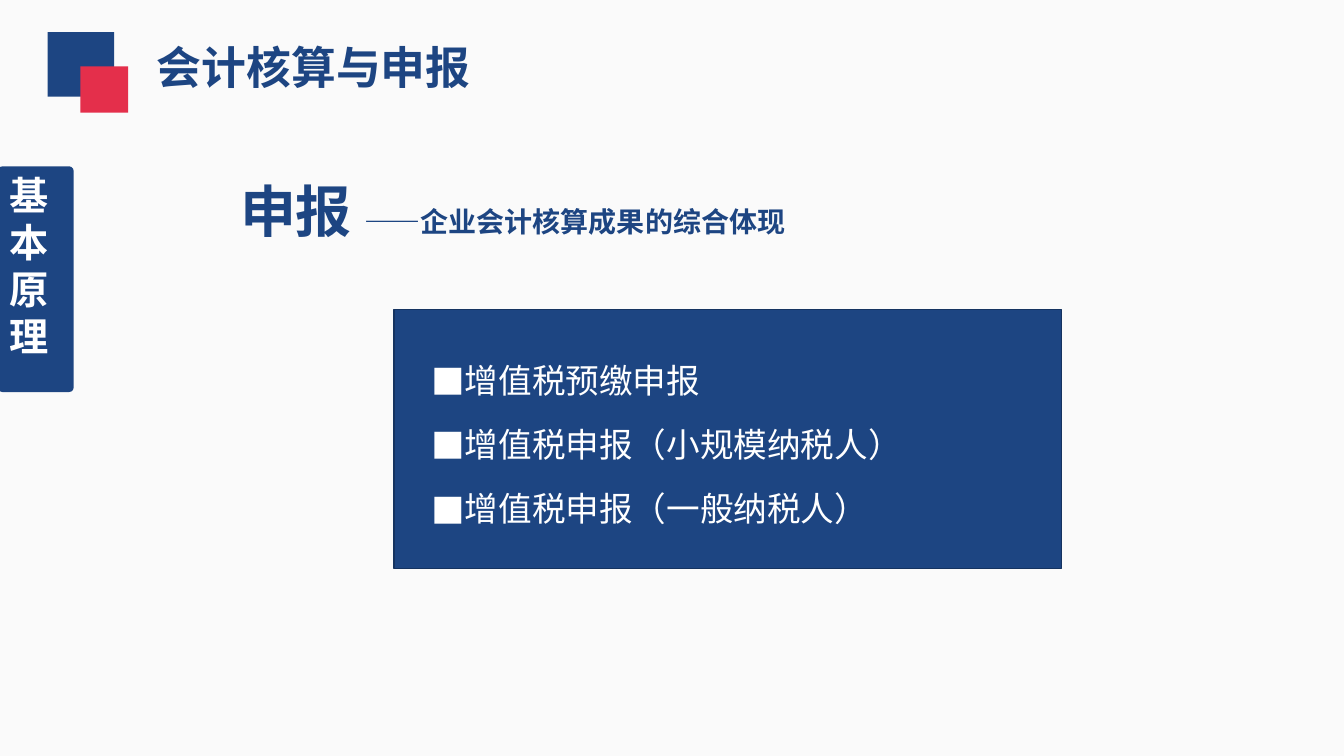
from pptx import Presentation
from pptx.dml.color import RGBColor
from pptx.enum.shapes import MSO_SHAPE as Kind
from pptx.enum.text import MSO_AUTO_SIZE as Fit, PP_ALIGN as Align
from pptx.oxml.ns import qn
from pptx.util import Pt
from lxml.etree import SubElement as Sub

NAVY, RED, WHITE = "1D4582", "E42F4B", "FFFFFF"


def tint(code):
    return RGBColor.from_string(code)


class Deck:
    """Holds the style and the current slide, and draws its elements."""

    def __init__(self, font, back):
        self.font = font
        self.file = Presentation()
        self.file.slide_width, self.file.slide_height = Pt(960), Pt(540)
        self.slide = self.file.slides.add_slide(self.file.slide_layouts[6])
        fill = self.slide.background.fill
        fill.solid()
        fill.fore_color.rgb = tint(back)

    def block(self, box, color, edge=None, round=None, home=None):
        kind = Kind.RECTANGLE if round is None else Kind.ROUNDED_RECTANGLE
        shape = (home or self.slide).shapes.add_shape(kind, *map(Pt, box))
        shape.shadow.inherit = False
        shape.fill.solid()
        shape.fill.fore_color.rgb = tint(color)
        if round is not None:
            shape.adjustments[0] = round
        if edge:
            shape.line.color.rgb = tint(edge)
            shape.line.width = Pt(1)
        else:
            shape.line.fill.background()

    def mark(self, *parts):
        group = self.slide.shapes.add_group_shape()
        for box, color in parts:
            self.block(box, color, home=group)

    def run(self, para, text, size, color, bold):
        run = para.add_run()
        run.text = text
        font = run.font
        font.size, font.bold = Pt(size), bold
        font.color.rgb = tint(color)
        font.name = self.font
        Sub(run._r.get_or_add_rPr(), qn("a:ea"), typeface=self.font)

    def text(self, box, paras, color=NAVY, bold=True, wrap=True, align=Align.LEFT, bullet=None):
        frame = self.slide.shapes.add_textbox(*map(Pt, box)).text_frame
        frame.word_wrap = wrap
        frame.auto_size = Fit.SHAPE_TO_FIT_TEXT
        for i, runs in enumerate(paras):
            para = frame.add_paragraph() if i else frame.paragraphs[0]
            para.alignment = align
            if bullet:
                self.bullet(para, bullet)
            for words, size in runs:
                self.run(para, words, size, color, bold)

    def bullet(self, para, sign):
        para.line_spacing = 1.5
        para.space_before, para.space_after = Pt(2), Pt(0.7)
        props = para._p.get_or_add_pPr()
        props.set("marL", str(Pt(22.5)))
        props.set("indent", str(-Pt(22.5)))
        Sub(props, qn("a:buFont"), typeface=self.font)
        Sub(props, qn("a:buChar"), char=sign)


def main():
    deck = Deck("Noto Sans CJK SC", "FAFAFA")
    deck.block((281.5, 221, 476.6, 185), NAVY, edge="153360")
    deck.mark(((34, 23, 47.5, 46), NAVY), ((57.5, 47.5, 34, 33), RED))
    deck.text((105, 24.5, 240.5, 46), [[("会计核算与申报", 32)]], wrap=False)
    deck.block((-1.4, 118.8, 54, 161.3), NAVY, round=0.061)
    deck.text((0, 118.8, 52.6, 143.3), [[("基本原理", 28)]], WHITE)
    taxes = ["增值税预缴申报", "增值税申报（小规模纳税人）", "增值税申报（一般纳税人）"]
    deck.text((301, 239, 445, 139), [[(tax, 24)] for tax in taxes], WHITE, False, bullet="■")
    deck.text((45.4, 122.4, 522.7, 55.4),
              [[("申报 ", 40), ("——企业会计核算成果的综合体现", 20)]], align=Align.RIGHT)
    deck.file.save("out.pptx")


if __name__ == "__main__":
    main()
